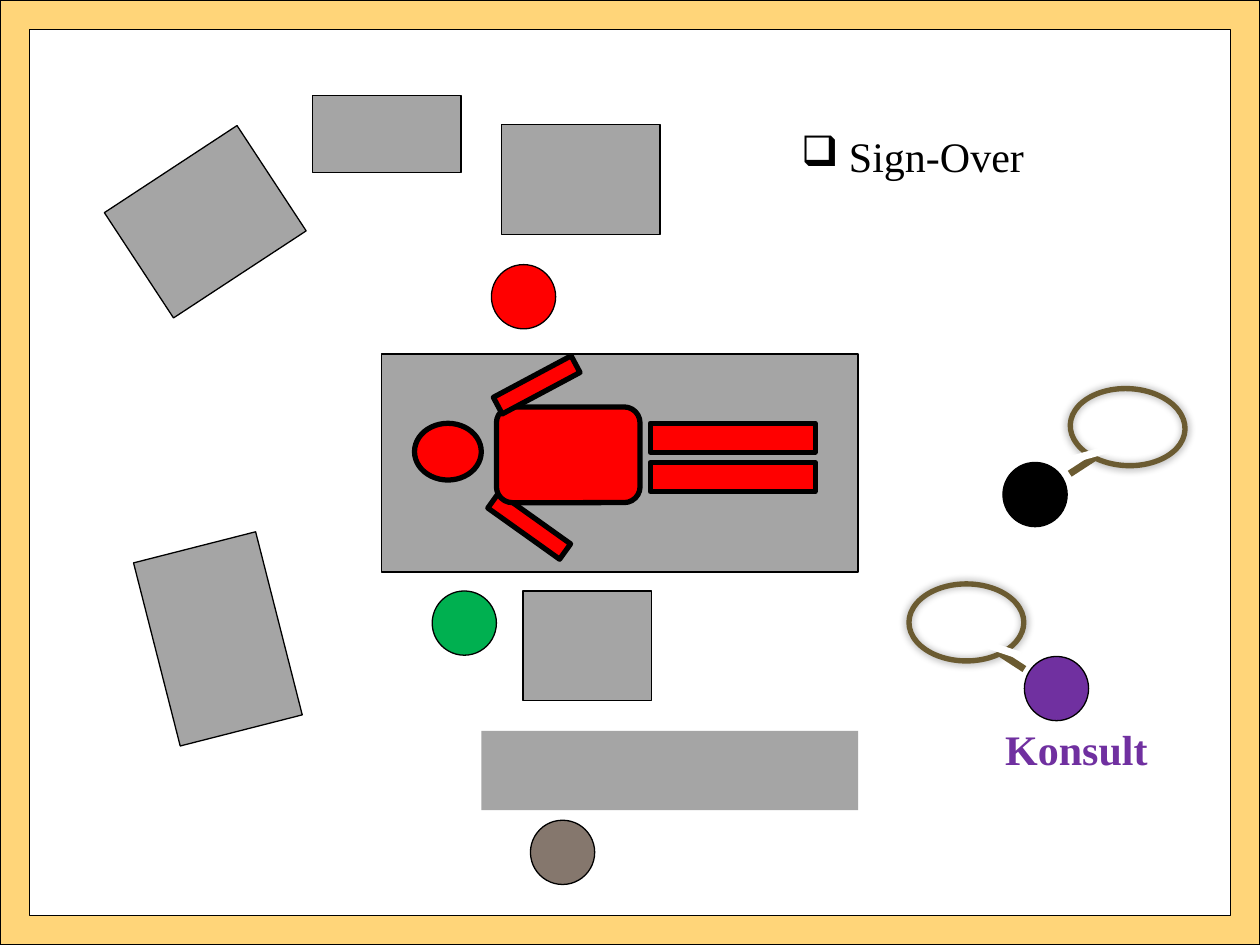
from typing import NamedTuple, Optional

from lxml import etree
from pptx import Presentation
from pptx.dml.color import RGBColor
from pptx.enum.shapes import MSO_CONNECTOR, MSO_SHAPE
from pptx.enum.text import MSO_AUTO_SIZE
from pptx.oxml.ns import qn
from pptx.util import Pt

PX = 9144
FONT = "Times New Roman"

RECT = MSO_SHAPE.RECTANGLE
ROUNDED = MSO_SHAPE.ROUNDED_RECTANGLE
OVAL = MSO_SHAPE.OVAL
DONUT = MSO_SHAPE.DONUT
FRAME = MSO_SHAPE.FRAME
STRAIGHT = MSO_CONNECTOR.STRAIGHT
FIT_SHAPE = MSO_AUTO_SIZE.SHAPE_TO_FIT_TEXT

BLACK = RGBColor(0x00, 0x00, 0x00)
WHITE = RGBColor(0xFF, 0xFF, 0xFF)
SAND = RGBColor(0xFF, 0xD5, 0x79)
GREY = RGBColor(0xA5, 0xA5, 0xA5)
RED = RGBColor(0xFF, 0x00, 0x00)
GREEN = RGBColor(0x00, 0xB0, 0x50)
PURPLE = RGBColor(0x70, 0x30, 0xA0)
TAUPE = RGBColor(0x85, 0x77, 0x6D)
BRONZE = RGBColor(0x6B, 0x5B, 0x31)


class Block(NamedTuple):
    x: int
    y: int
    w: int
    h: int
    fill: RGBColor = GREY
    line_pt: float = 0.75
    rotation: float = 0
    kind: int = RECT
    adjust: Optional[float] = None
    line: RGBColor = BLACK


class Person(NamedTuple):
    x: int
    y: int
    color: RGBColor


class Bubble(NamedTuple):
    x: int
    y: int
    side: int
    tilt: float


BORDER = Block(0, 0, 1000, 750, SAND, kind=FRAME, adjust=0.031)
BED = Block(303, 281, 378, 173)
PATIENT = [
    Block(329, 336, 53, 45, RED, 3, kind=OVAL),
    Block(516, 367, 131, 23, RED, 3),
    Block(385, 410, 70, 15, RED, 3, 35.5),
    Block(394, 323, 114, 76, RED, 3, kind=ROUNDED, adjust=0.167),
    Block(516, 336, 131, 23, RED, 3),
    Block(391, 298, 70, 15, RED, 3, 331.9),
]
EQUIPMENT = [
    Block(382, 580, 299, 63, line_pt=0),
    Block(398, 99, 126, 87),
    Block(100, 126, 126, 100, rotation=326.7),
    Block(98, 457, 150, 100, rotation=255.7),
    Block(248, 76, 118, 61),
]
TROLLEY = Block(415, 469, 102, 87)
BUBBLES = [Bubble(848, 307, -1, 2.6), Bubble(720, 462, 1, 0)]
TEAM = [
    Person(813, 521, PURPLE),
    Person(421, 651, TAUPE),
    Person(796, 367, BLACK),
    Person(390, 210, RED),
    Person(343, 469, GREEN),
]
PERSON_SIZE = 51


def draw_block(shapes, b: Block):
    s = shapes.add_shape(b.kind, b.x * PX, b.y * PX, b.w * PX, b.h * PX)
    s.shadow.inherit = False
    s.rotation = b.rotation
    if b.adjust is not None:
        s.adjustments[0] = b.adjust
    s.fill.solid()
    s.fill.fore_color.rgb = b.fill
    if b.line_pt:
        s.line.color.rgb = b.line
        s.line.width = Pt(b.line_pt)
    else:
        s.line.fill.background()
    return s


def add_glow_shadow(s) -> None:
    effects = s._element.spPr.find(qn("a:effectLst"))
    shadow = etree.SubElement(effects, qn("a:outerShdw"), blurRad="63500", dist="0", dir="0")
    color = etree.SubElement(shadow, qn("a:srgbClr"), val=str(BLACK))
    etree.SubElement(color, qn("a:alpha"), val="40000")


def draw_bubble(slide, b: Bubble) -> None:
    shapes = slide.shapes.add_group_shape().shapes
    center = b.x + 47
    ring = Block(b.x, b.y, 94, 64, BRONZE, 1, b.tilt, DONUT, 0.045, BRONZE)
    add_glow_shadow(draw_block(shapes, ring))
    tail = shapes.add_connector(
        STRAIGHT,
        (center + b.side * 26) * PX, (b.y + 56) * PX,
        (center + b.side * 46) * PX, (b.y + 69) * PX,
    )
    tail.line.color.rgb = BRONZE
    tail.line.width = Pt(4)
    etree.SubElement(tail._element.spPr, qn("a:effectLst"))
    gap_angle = b.tilt - b.side * 71.7
    draw_block(shapes, Block(center + b.side * 24 - 3, b.y + 32, 6, 40, WHITE, 0, gap_angle))


def draw_label(slide, x: int, y: int, w: int, text: str, color: RGBColor, bold: bool = False):
    tf = slide.shapes.add_textbox(x * PX, y * PX, w * PX, 50 * PX).text_frame
    tf.word_wrap = True
    tf.auto_size = FIT_SHAPE
    p = tf.paragraphs[0]
    r = p.add_run()
    r.text = text
    r.font.name = FONT
    r.font.size = Pt(24)
    r.font.bold = bold
    r.font.color.rgb = color
    return p


def add_bullet(p, char: str) -> None:
    pPr = p._p.get_or_add_pPr()
    pPr.set("marL", str(38 * PX))
    pPr.set("indent", str(-38 * PX))
    color = etree.SubElement(pPr, qn("a:buClr"))
    etree.SubElement(color, qn("a:srgbClr"), val=str(BLACK))
    etree.SubElement(pPr, qn("a:buChar"), char=char)


def main() -> None:
    prs = Presentation()
    prs.slide_width = 1000 * PX
    prs.slide_height = 750 * PX
    slide = prs.slides.add_slide(prs.slide_layouts[6])

    for block in [BORDER, BED, *PATIENT, *EQUIPMENT]:
        draw_block(slide.shapes, block)
    add_bullet(draw_label(slide, 626, 99, 213, "Sign-Over", BLACK), "❑")
    draw_label(slide, 788, 569, 134, "Konsult", PURPLE, bold=True)
    for bubble in BUBBLES:
        draw_bubble(slide, bubble)
    for m in TEAM:
        draw_block(slide.shapes, Block(m.x, m.y, PERSON_SIZE, PERSON_SIZE, m.color, kind=OVAL))
    draw_block(slide.shapes, TROLLEY)

    prs.save("out.pptx")


if __name__ == "__main__":
    main()
